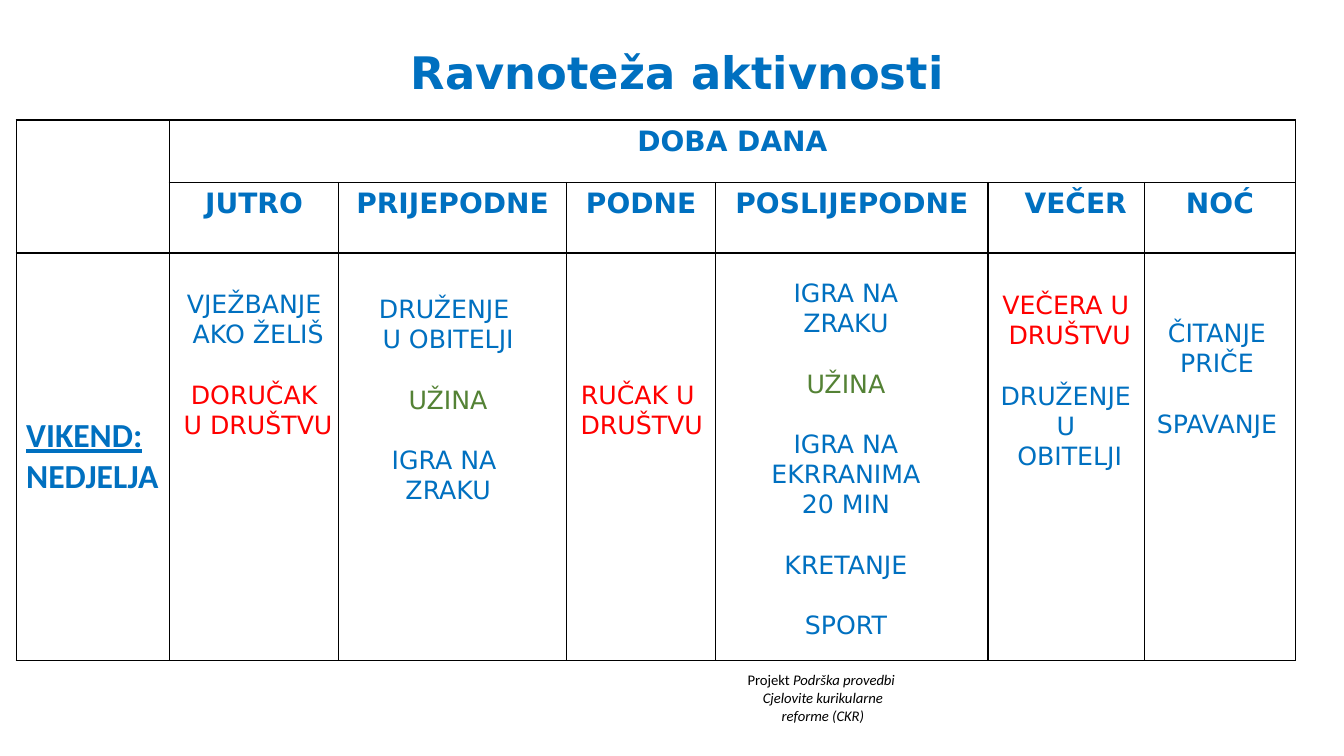
import itertools
import pptx
import pptx.util
import pptx.dml.color
import pptx.enum.text
import pptx.oxml

WIDE, HIGH = 13.33, 7.5
BLUE, RED, GREEN, BLACK = "0070C0", "FF0000", "548235", "000000"
SANS, BODY = "DejaVu Sans", "Calibri"
COLS = [1.52, 1.68, 2.26, 1.48, 2.7, 1.55, 1.5]
ROWS = [0.62, 0.7, 4.04]
HEADS = ["JUTRO", "PRIJEPODNE", "PODNE", "POSLIJEPODNE", "VEČER", "NOĆ"]
GAP = 21.6
TASKS = [
    ((0.02, 0.3, 1.72, 1.62), False,
     [(BLUE, ["VJEŽBANJE ", "AKO ŽELIŠ"]), (RED, ["DORUČAK ", "U DRUŠTVU"])]),
    ((0.3, 0.35, 1.57, 2.53), True,
     [(BLUE, ["DRUŽENJE ", "U OBITELJI"]), (GREEN, ["UŽINA"]),
      (BLUE, ["IGRA NA ", "ZRAKU"])]),
    ((0.02, 1.2, 1.45, 0.71), False, [(RED, ["RUČAK U ", "DRUŠTVU"])]),
    ((0.42, 0.19, 1.74, 3.74), False,
     [(BLUE, ["IGRA NA", "ZRAKU"]), (GREEN, ["UŽINA"]),
      (BLUE, ["IGRA NA", "EKRRANIMA", "20 MIN"]),
      (BLUE, ["KRETANJE"]), (BLUE, ["SPORT"])]),
    ((-0.01, 0.31, 1.64, 2.22), False,
     [(RED, ["VEČERA U ", "DRUŠTVU"]), (BLUE, ["DRUŽENJE ", "U ", "OBITELJI"])]),
    ((-0.02, 0.59, 1.48, 1.31), False,
     [(BLUE, ["ČITANJE", "PRIČE"]), (BLUE, ["SPAVANJE"])]),
]


def inch(size):
    return pptx.util.Inches(size)


def paint(hue):
    return pptx.dml.color.RGBColor.from_string(hue)


def write(para, text, size, hue, face=SANS, bold=False, slant=False, line=False):
    run = para.add_run()
    run.text = text
    font = run.font
    font.size, font.name = pptx.util.Pt(size), face
    font.bold, font.italic, font.underline = bold, slant, line
    font.color.rgb = paint(hue)


def center(para):
    para.alignment = pptx.enum.text.PP_ALIGN.CENTER
    return para


def add_box(slide, box, wrap=True, grow=True):
    frame = slide.shapes.add_textbox(*map(inch, box)).text_frame
    frame.word_wrap = wrap
    kind = pptx.enum.text.MSO_AUTO_SIZE
    frame.auto_size = kind.SHAPE_TO_FIT_TEXT if grow else kind.NONE
    return frame


def add_title(slide, box):
    frame = add_box(slide, box, grow=False)
    frame.vertical_anchor = pptx.enum.text.MSO_ANCHOR.MIDDLE
    para = center(frame.paragraphs[0])
    para.line_spacing = 0.9
    write(para, "Ravnoteža aktivnosti", 32, BLUE, bold=True)


def add_foot(slide, box):
    frame = add_box(slide, box)
    para = center(frame.paragraphs[0])
    write(para, "Projekt ", 10.5, BLACK, BODY)
    write(para, "Podrška provedbi", 10.5, BLACK, BODY, slant=True)
    para = center(frame.add_paragraph())
    write(para, " Cjelovite kurikularne", 10.5, BLACK, BODY, slant=True)
    para.add_line_break()
    write(para, " reforme (CKR)", 10.5, BLACK, BODY, slant=True)


def frame_cell(cell):
    props = cell._tc.get_or_add_tcPr()
    space = "http://schemas.openxmlformats.org/drawingml/2006/main"
    for side in ("lnL", "lnR", "lnT", "lnB"):
        props.append(pptx.oxml.parse_xml(
            f'<a:{side} xmlns:a="{space}" w="12700"><a:solidFill>'
            f'<a:srgbClr val="{BLACK}"/></a:solidFill></a:{side}>'))
    cell.fill.background()


def add_grid(slide, left, top):
    shape = slide.shapes.add_table(
        len(ROWS), len(COLS), inch(left), inch(top), inch(sum(COLS)), inch(sum(ROWS)))
    grid = shape.table
    grid.first_row = grid.horz_banding = False
    for col, size in zip(grid.columns, COLS):
        col.width = inch(size)
    for row, size in zip(grid.rows, ROWS):
        row.height = inch(size)
    for cell in grid.iter_cells():
        frame_cell(cell)
    grid.cell(0, 0).merge(grid.cell(1, 0))
    grid.cell(0, 1).merge(grid.cell(0, len(COLS) - 1))
    slots = [(0, 1, "DOBA DANA")] + [(1, i, head) for i, head in enumerate(HEADS, 1)]
    for row, col, head in slots:
        para = center(grid.cell(row, col).text_frame.paragraphs[0])
        write(para, head, 20, BLUE, bold=True)
    grid.cell(1, 5).margin_left = inch(0.29)
    day = grid.cell(2, 0)
    day.vertical_anchor = pptx.enum.text.MSO_ANCHOR.MIDDLE
    day.margin_right = inch(0.05)
    para = day.text_frame.paragraphs[0]
    write(para, "VIKEND: ", 24, BLUE, BODY, bold=True, line=True)
    write(para, "NEDJELJA", 24, BLUE, BODY, bold=True)


def add_tasks(slide, left, top):
    edges = itertools.accumulate(COLS[:-1], initial=left)
    next(edges)
    floor = top + sum(ROWS[:2])
    for edge, (place, wrap, groups) in zip(edges, TASKS):
        across, down, wide, high = place
        frame = add_box(slide, (edge + across, floor + down, wide, high), wrap)
        para = frame.paragraphs[0]
        for rank, (hue, lines) in enumerate(groups):
            for spot, text in enumerate(lines):
                if rank or spot:
                    para = frame.add_paragraph()
                if rank and not spot:
                    para.space_before = pptx.util.Pt(GAP)
                write(center(para), text, 18, hue)


def main():
    deck = pptx.Presentation()
    deck.slide_width, deck.slide_height = inch(WIDE), inch(HIGH)
    slide = deck.slides.add_slide(deck.slide_layouts[6])
    add_foot(slide, (6.99, 6.61, 2.31, 0.63))
    add_title(slide, (0.97, 0.58, 11.5, 0.33))
    add_grid(slide, 0.16, 1.19)
    add_tasks(slide, 0.16, 1.19)
    deck.save("out.pptx")


if __name__ == "__main__":
    main()
